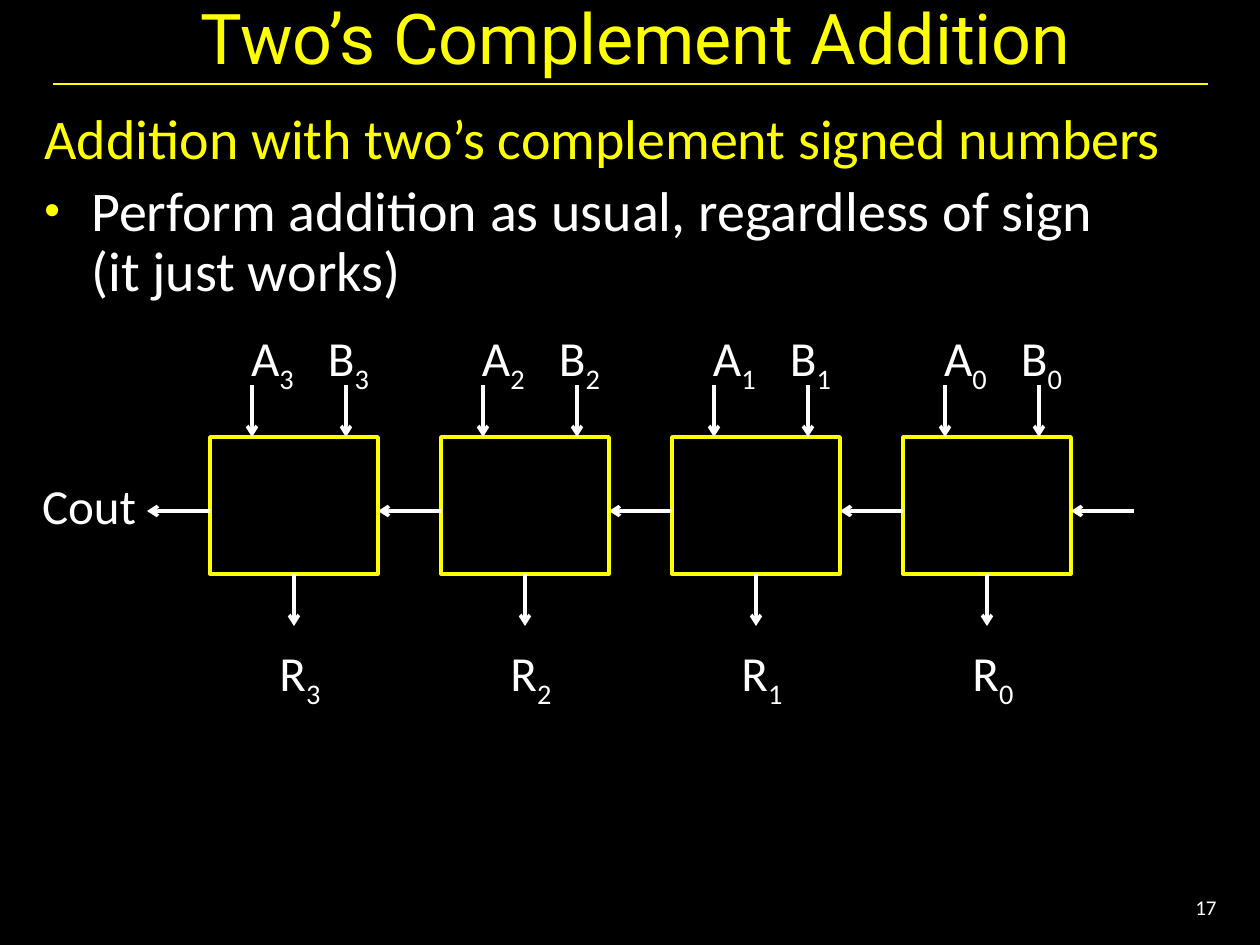
"""Build the slide on two's complement addition with a four-bit ripple adder."""
from lxml import etree
from pptx import Presentation
from pptx import util as u
from pptx.dml.color import RGBColor
from pptx.enum import shapes, text
from pptx.oxml.ns import qn

TITLE = "Two’s Complement Addition"
HEADING = "Addition with two’s complement signed numbers"
BULLET = ("Perform addition as usual, regardless of sign", "(it just works)")
CARRY_OUT = "Cout"
PAGE = "17"
BITS = (0, 1, 2, 3)

YELLOW = RGBColor(0xFF, 0xFF, 0x00)
WHITE = RGBColor(0xFF, 0xFF, 0xFF)
BLACK = RGBColor(0x00, 0x00, 0x00)
FONT, TITLE_FONT = "Calibri", "Roboto"

PX = u.Inches(1) / 126
BOX_W, BOX_H, BOX_TOP, PITCH = 168, 137, 437, 231
LAST_BOX_X = 903
ARROW_H, CARRY_W, CARRY_Y = 52, 63, 511
INPUT_XS = (42, 136)
B_TAB = 77


def px(n):
    return u.Emu(round(n * PX))


def add_run(p, content, size, color=WHITE, font=FONT, baseline=None):
    r = p.add_run()
    r.text = content
    r.font.size, r.font.name = u.Pt(size), font
    r.font.color.rgb = color
    if baseline:
        r.font._element.set("baseline", str(baseline))


def add_text(s, x, y, w, h, align=text.PP_ALIGN.CENTER, spacing=None):
    tf = s.shapes.add_textbox(px(x), px(y), px(w), px(h)).text_frame
    tf.word_wrap = True
    p = tf.paragraphs[0]
    p.alignment = align
    if spacing:
        p.line_spacing = spacing
    return tf, p


def add_line(s, x1, y1, x2, y2, color=WHITE, width=2, arrow=True):
    c = s.shapes.add_connector(shapes.MSO_CONNECTOR.STRAIGHT, px(x1), px(y1), px(x2), px(y2))
    c.line.color.rgb = color
    c.line.width = u.Pt(width)
    if arrow:
        etree.SubElement(c.line._get_or_add_ln(), qn("a:tailEnd"), type="arrow")
    etree.SubElement(c._element.spPr, qn("a:effectLst"))
    return c


def add_indexed(p, letter, bit):
    add_run(p, letter, 28)
    add_run(p, str(bit), 28, baseline=-25000)


def add_stage(s, bit):
    x = LAST_BOX_X - bit * PITCH
    bottom, middle = BOX_TOP + BOX_H, x + BOX_W / 2
    sp = s.shapes.add_shape(shapes.MSO_SHAPE.RECTANGLE, px(x), px(BOX_TOP), px(BOX_W), px(BOX_H))
    sp.shadow.inherit = False
    sp.fill.background()
    sp.line.color.rgb = YELLOW
    sp.line.width = u.Pt(2)

    tf, p = add_text(s, x - 74, 311, 347, 77, text.PP_ALIGN.LEFT, 1.16)
    tf.margin_left = px(115)
    tabs = etree.SubElement(p._p.get_or_add_pPr(), qn("a:tabLst"))
    etree.SubElement(tabs, qn("a:tab"), pos=str(px(B_TAB)), algn="l")
    add_indexed(p, "A", bit)
    add_indexed(p, "\tB", bit)

    for dx in INPUT_XS:
        add_line(s, x + dx, BOX_TOP - ARROW_H, x + dx, BOX_TOP)
    add_line(s, x, CARRY_Y, x - CARRY_W, CARRY_Y)
    add_line(s, middle, bottom, middle, bottom + ARROW_H).begin_connect(sp, 2)

    tf, p = add_text(s, middle - 52, bottom + ARROW_H, 116, 77, spacing=1.16)
    add_indexed(p, "R", bit)


def add_body(s):
    tf, heading = add_text(s, 32, 105, 1197, 788, text.PP_ALIGN.LEFT)
    bullet = tf.add_paragraph()
    for p in (heading, bullet):
        p.line_spacing, p.space_before = 0.9, u.Pt(6.4)
        pPr = p._p.get_or_add_pPr()
        pPr.set("marL", str(px(47)))
        pPr.set("indent", str(px(-47)))
    add_run(heading, HEADING, 32, YELLOW)

    pPr = bullet._p.get_or_add_pPr()
    color = etree.SubElement(pPr, qn("a:buClr"))
    etree.SubElement(color, qn("a:srgbClr"), val=str(YELLOW))
    etree.SubElement(pPr, qn("a:buSzPct"), val="80000")
    etree.SubElement(pPr, qn("a:buFont"), typeface="Arial")
    etree.SubElement(pPr, qn("a:buChar"), char="•")
    add_run(bullet, BULLET[0], 32)
    bullet.add_line_break()
    add_run(bullet, BULLET[1], 32)


def main():
    prs = Presentation()
    prs.slide_width, prs.slide_height = px(1260), px(945)
    s = prs.slides.add_slide(prs.slide_layouts[5])
    s.background.fill.solid()
    s.background.fill.fore_color.rgb = BLACK

    add_line(s, 53, 84, 1208, 84, YELLOW, 0.75, arrow=False)
    tf, p = add_text(s, 1124, 882, 105, 50, text.PP_ALIGN.RIGHT)
    tf.vertical_anchor = text.MSO_ANCHOR.MIDDLE
    add_run(p, PAGE, 12)

    title = s.shapes.title
    title.left, title.top, title.width, title.height = px(53), px(0), px(1165), px(73)
    tf = title.text_frame
    tf.auto_size = text.MSO_AUTO_SIZE.NONE
    tf.vertical_anchor = text.MSO_ANCHOR.MIDDLE
    tf.paragraphs[0].alignment = text.PP_ALIGN.CENTER
    add_run(tf.paragraphs[0], TITLE, 40, YELLOW, TITLE_FONT)

    add_body(s)
    for bit in BITS:
        add_stage(s, bit)
    carry_in = LAST_BOX_X + BOX_W
    add_line(s, carry_in + CARRY_W, CARRY_Y, carry_in, CARRY_Y)
    tf, p = add_text(s, 10, 469, 158, 72)
    add_run(p, CARRY_OUT, 28)
    prs.save("out.pptx")


if __name__ == "__main__":
    main()
